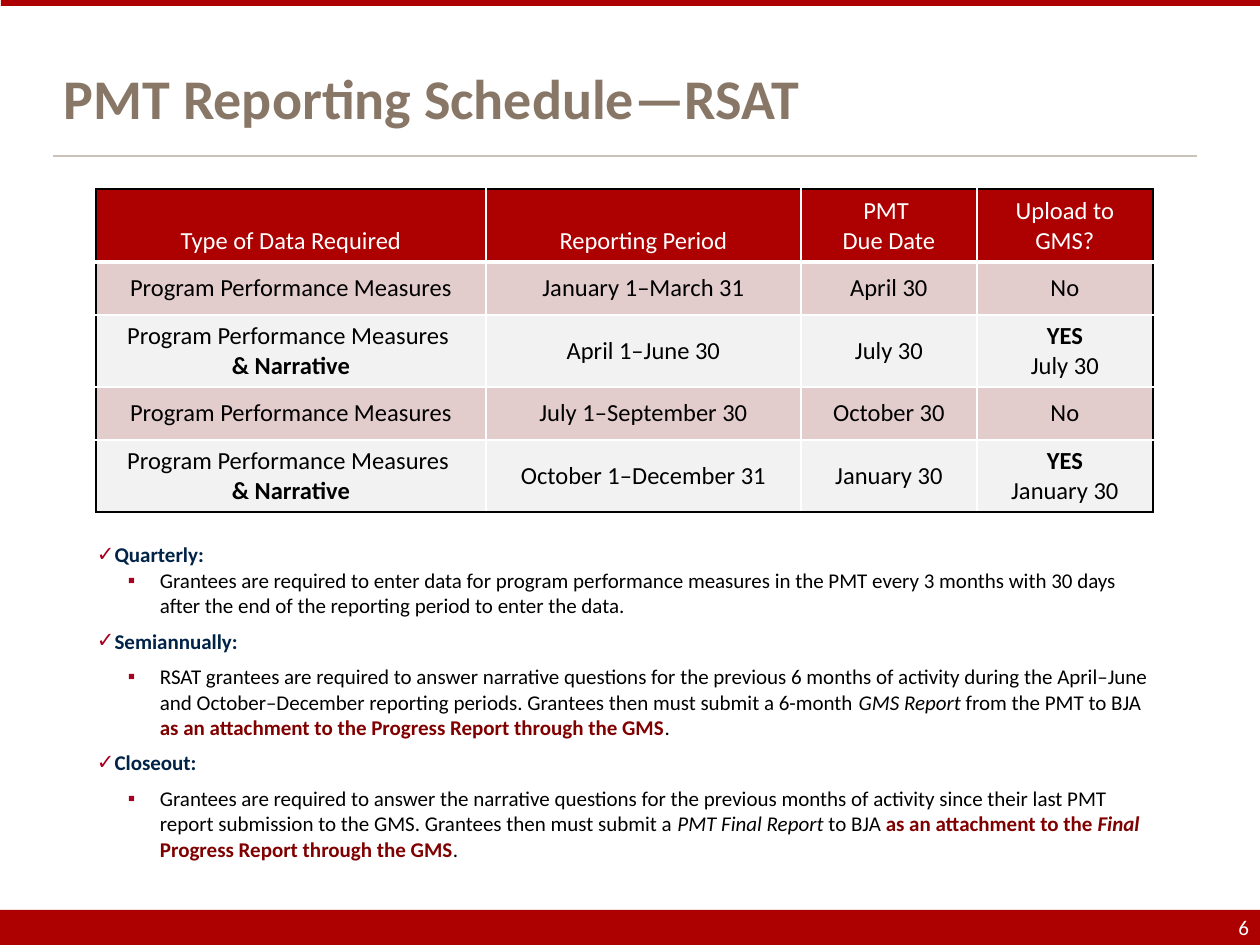
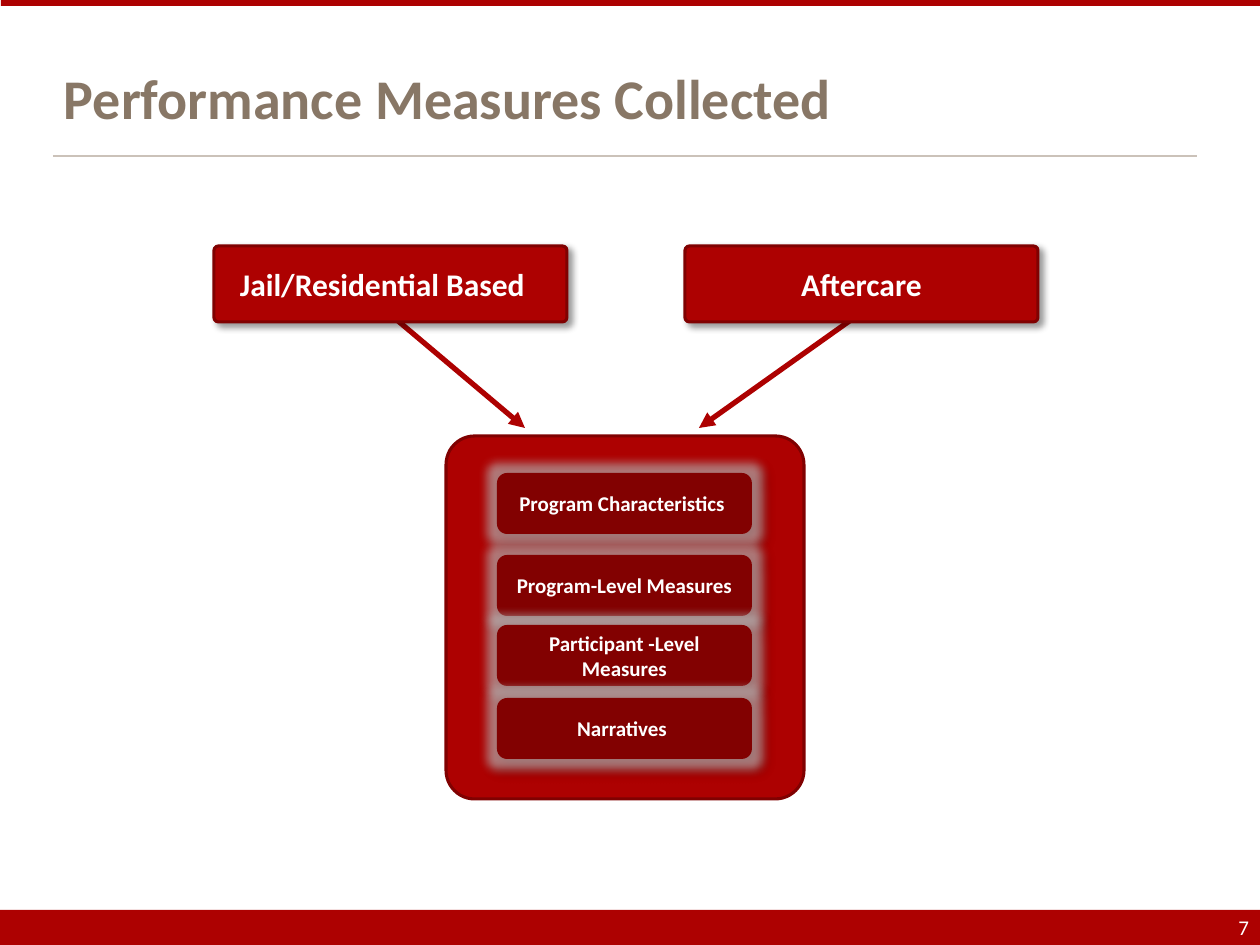
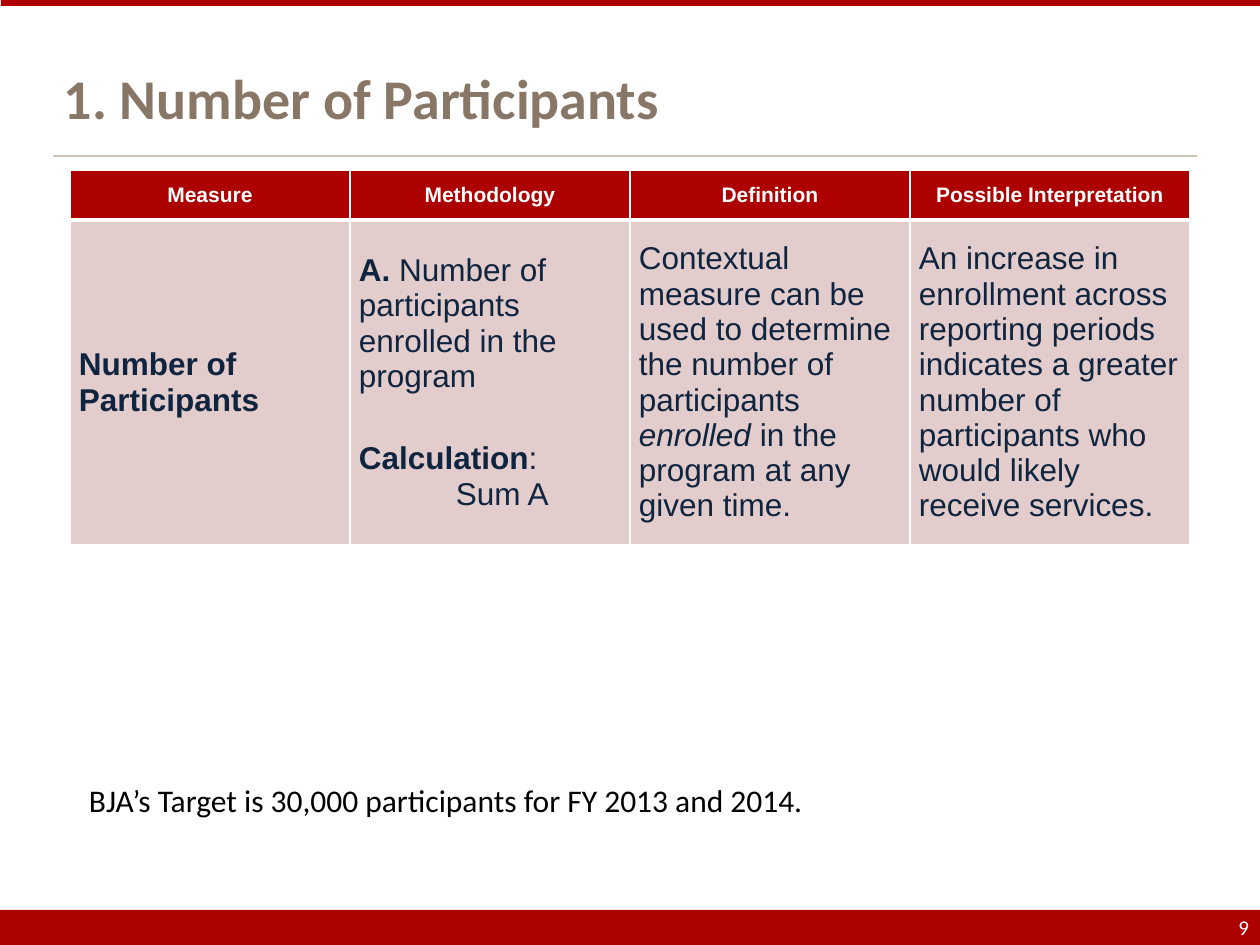
"""Build three slides on the PMT reporting schedule and its measures."""
from dataclasses import dataclass
from typing import Optional

from lxml import etree
from pptx import Presentation
from pptx.dml.color import RGBColor
from pptx.enum.shapes import MSO_CONNECTOR, MSO_SHAPE
from pptx.enum.text import MSO_ANCHOR, PP_ALIGN
from pptx.oxml.ns import qn
from pptx.util import Emu, Pt

LEFT, MID, RIGHT = PP_ALIGN.LEFT, PP_ALIGN.CENTER, PP_ALIGN.RIGHT
TOP, CENTER, BASE = MSO_ANCHOR.TOP, MSO_ANCHOR.MIDDLE, MSO_ANCHOR.BOTTOM
RECT, ROUND = MSO_SHAPE.RECTANGLE, MSO_SHAPE.ROUNDED_RECTANGLE
STRAIGHT = MSO_CONNECTOR.STRAIGHT
SCALE = 914400 / 126
WIDE, HIGH = 1260, 945


@dataclass(frozen=True)
class Theme:
    red: str = "AD0101"
    edge: str = "800101"
    deep: str = "820101"
    stress: str = "800000"
    tick: str = "A50021"
    pink: str = "E3CCCC"
    pale: str = "F2F2F2"
    rule: str = "CBC2B9"
    glow: str = "C8C8C8"
    title: str = "887766"
    navy: str = "002347"
    ink: str = "0F243E"
    black: str = "000000"
    white: str = "FFFFFF"
    body: str = "Calibri"
    grid: str = "Arial"
    huge: int = 32
    big: int = 18
    cell: int = 14
    small: int = 12


T = Theme()


@dataclass(frozen=True)
class Style:
    size: int = T.small
    color: str = T.black
    bold: bool = False
    font: str = T.body


@dataclass(frozen=True)
class Run:
    text: str
    bold: Optional[bool] = None
    italic: bool = False
    color: Optional[str] = None


@dataclass(frozen=True)
class Par:
    runs: tuple[Run, ...]
    align: PP_ALIGN = LEFT
    before: int = 0
    after: int = 0
    bullet: str = ""
    left: int = 0
    hang: int = 0


@dataclass(frozen=True)
class Box:
    x: int
    y: int
    w: int
    h: int


@dataclass(frozen=True)
class Pads:
    left: int = 13
    top: int = 6
    right: int = 13
    bottom: int = 6


@dataclass(frozen=True)
class Card:
    text: str
    box: Box
    pads: Pads = Pads()


SLIM = Pads(11, 5, 11, 5)
FLAT = Pads(9, 0, 9, 0)


def px(num: float) -> Emu:
    return Emu(round(num * SCALE))


def rgb(code: str) -> RGBColor:
    return RGBColor.from_string(code)


def place(box: Box) -> tuple[Emu, ...]:
    return px(box.x), px(box.y), px(box.w), px(box.h)


def add(node, tag: str, **attrs):
    return etree.SubElement(node, qn(tag), {key: str(val) for key, val in attrs.items()})


def tint(node, code: str, alpha: int = 100) -> None:
    color = add(node, "a:srgbClr", val=code)
    if alpha < 100:
        add(color, "a:alpha", val=alpha * 1000)


def para(text: str, align: PP_ALIGN = LEFT, bold: Optional[bool] = None) -> Par:
    return Par((Run(text, bold),), align)


def write(frame, pars: tuple[Par, ...], style: Style) -> None:
    for num, par in enumerate(pars):
        item = frame.add_paragraph() if num else frame.paragraphs[0]
        item.alignment = par.align
        item.space_before, item.space_after = Pt(par.before), Pt(par.after)
        props = item._p.get_or_add_pPr()
        props.set("marL", str(px(par.left)))
        props.set("indent", str(px(-par.hang)))
        if par.bullet:
            tint(add(props, "a:buClr"), T.tick)
            add(props, "a:buFont", typeface=T.grid)
            add(props, "a:buChar", char=par.bullet)
        for part in par.runs:
            run = item.add_run()
            run.text = part.text
            font = run.font
            font.name, font.size = style.font, Pt(style.size)
            font.bold = style.bold if part.bold is None else part.bold
            font.italic = part.italic
            font.color.rgb = rgb(part.color or style.color)


def fit(frame, pads: Pads, anchor: MSO_ANCHOR) -> None:
    frame.word_wrap = True
    frame.vertical_anchor = anchor
    frame.margin_left, frame.margin_right = px(pads.left), px(pads.right)
    frame.margin_top, frame.margin_bottom = px(pads.top), px(pads.bottom)


def label(slide, box: Box, pars: tuple[Par, ...], style: Style,
          pads: Pads = Pads(), anchor: MSO_ANCHOR = TOP) -> None:
    frame = slide.shapes.add_textbox(*place(box)).text_frame
    fit(frame, pads, anchor)
    write(frame, pars, style)


def panel(slide, box: Box, fill: str, kind: MSO_SHAPE = RECT,
          edge: str = "", curve: float = 0):
    shape = slide.shapes.add_shape(kind, *place(box))
    shape.shadow.inherit = False
    shape.fill.solid()
    shape.fill.fore_color.rgb = rgb(fill)
    if edge:
        shape.line.color.rgb = rgb(edge)
        shape.line.width = Pt(1.75)
    else:
        shape.line.fill.background()
    if curve:
        shape.adjustments[0] = curve
    return shape


def button(slide, card: Card, fill: str, size: int, edge: str = "",
           curve: float = 0, halo: bool = False) -> None:
    shape = panel(slide, card.box, fill, ROUND, edge, curve)
    fit(shape.text_frame, card.pads, CENTER)
    write(shape.text_frame, (para(card.text, MID),), Style(size, T.white, True))
    effects = shape._element.spPr.find(qn("a:effectLst"))
    if halo:
        tint(add(effects, "a:glow", rad=Pt(11)), T.glow, 60)
    shade = add(effects, "a:outerShdw", blurRad=Pt(4), dist=Pt(3),
                dir=45 * 60000, algn="tl", rotWithShape=0)
    tint(shade, T.black, 40)


def stroke(slide, start: tuple[int, int], end: tuple[int, int], color: str,
           width: float, arrow: bool = False) -> None:
    link = slide.shapes.add_connector(STRAIGHT, *map(px, start + end))
    link.line.color.rgb = rgb(color)
    link.line.width = Pt(width)
    props = link._element.spPr
    if arrow:
        add(props.find(qn("a:ln")), "a:tailEnd", type="triangle")
    add(props, "a:effectLst")


def border(cell, sides: dict[str, tuple[str, int]]) -> None:
    props = cell._tc.get_or_add_tcPr()
    for side in "LRTB":
        color, width = sides[side]
        line = add(props, f"a:ln{side}", w=Pt(width))
        tint(add(line, "a:solidFill"), color)


def table(slide, spot: tuple[int, int], cols: list[int], rows: list[int],
          cells: list[list[tuple[Par, ...]]], head: Style, body: Style,
          pads: Pads, rim: str, anchor: MSO_ANCHOR) -> None:
    box = Box(*spot, sum(cols), sum(rows))
    grid = slide.shapes.add_table(len(rows), len(cols), *place(box)).table
    grid.first_row = grid.horz_banding = False
    for col, width in zip(grid.columns, cols):
        col.width = px(width)
    for row, height in zip(grid.rows, rows):
        row.height = px(height)
    for r, line in enumerate(cells):
        for c, pars in enumerate(line):
            cell = grid.cell(r, c)
            ends = {"L": c == 0, "R": c == len(cols) - 1,
                    "T": r == 0, "B": r == len(rows) - 1}
            sides = {key: (rim if out else T.white, 1) for key, out in ends.items()}
            if r == 0:
                sides["B"] = (T.white, 3)
            elif r == 1:
                sides["T"] = (T.white, 3)
            border(cell, sides)
            cell.fill.solid()
            fill = T.pink if r % 2 else T.pale
            cell.fill.fore_color.rgb = rgb(fill if r else T.red)
            cell.vertical_anchor = CENTER if r else anchor
            cell.margin_left, cell.margin_right = px(pads.left), px(pads.right)
            cell.margin_top, cell.margin_bottom = px(pads.top), px(pads.bottom)
            cell.text_frame.word_wrap = True
            write(cell.text_frame, pars, body if r else head)


def start(deck, title: str, page: int):
    slide = deck.slides.add_slide(deck.slide_layouts[6])
    panel(slide, Box(0, 910, WIDE, 35), T.red)
    panel(slide, Box(1, 0, WIDE - 1, 6), T.red)
    stroke(slide, (53, 156), (1197, 156), T.rule, 1.25)
    label(slide, Box(53, 32, 1144, 104), (para(title),),
          Style(T.huge, T.title, True), SLIM, BASE)
    label(slide, Box(1182, 910, 78, 35), (para(str(page), RIGHT),),
          Style(color=T.white), SLIM, CENTER)
    return slide


def topic(text: str, after: int = 6) -> Par:
    return Par((Run(text, True, color=T.navy),), after=after, bullet="✓")


def detail(*runs: Run) -> Par:
    return Par(runs, after=6, bullet="▪", left=63, hang=32)


def stress(text: str, italic: bool = False) -> Run:
    return Run(text, True, italic, T.stress)


def schedule(deck) -> None:
    slide = start(deck, "PMT Reporting Schedule—RSAT", 6)
    name = "Program Performance Measures"
    terms = [("January 1–March 31", "April 30"), ("April 1–June 30", "July 30"),
             ("July 1–September 30", "October 30"),
             ("October 1–December 31", "January 30")]
    cells = [[(para("Type of Data Required", MID),),
              (para("Reporting Period", MID),),
              (para("PMT ", MID), para("Due Date", MID)),
              (para("Upload to GMS?", MID),)]]
    for num, (term, due) in enumerate(terms):
        kind, load = (para(name, MID),), (para("No", MID),)
        if num % 2:
            kind = (para(name + " ", MID), para("& Narrative", MID, True))
            load = (para("YES", MID, True), para(due, MID))
        cells.append([kind, (para(term, MID),), (para(due, MID),), load])
    table(slide, (96, 189), [390, 315, 176, 176], [73, 53, 72, 53, 72], cells,
          Style(T.cell, T.white), Style(T.cell), Pads(), T.black, BASE)
    label(slide, Box(84, 536, 1081, 335), (
        topic("Quarterly:", 0),
        detail(Run("Grantees are required to enter data for program performance "
                   "measures in the PMT every 3 months with 30 days after the end "
                   "of the reporting period to enter the data.")),
        topic("Semiannually:"),
        detail(Run("RSAT grantees are required to answer narrative questions for "
                   "the previous 6 months of activity during the April–June and "
                   "October–December reporting periods. Grantees then must submit "
                   "a 6-month "),
               Run("GMS Report ", italic=True), Run("from the PMT to BJA "),
               stress("as an attachment to the Progress Report through the GMS"),
               Run(".")),
        topic("Closeout:"),
        detail(Run("Grantees are required to answer the narrative questions for "
                   "the previous months of activity since their last PMT report "
                   "submission to the GMS. Grantees then must submit a "),
               Run("PMT Final Report", italic=True), Run(" to BJA "),
               stress("as an attachment to the "), stress("Final ", True),
               stress("Progress Report through the GMS"), Run("."))),
        Style())


def measures(deck) -> None:
    slide = start(deck, "Performance Measures Collected", 7)
    stroke(slide, (353, 283), (525, 428), T.red, 3, True)
    stroke(slide, (903, 283), (699, 428), T.red, 3, True)
    for card in (Card("Jail/Residential Based", Box(214, 246, 353, 76), Pads(right=29)),
                 Card("Aftercare", Box(685, 246, 353, 76))):
        button(slide, card, T.red, T.big, T.edge, 0.06)
    panel(slide, Box(446, 436, 358, 363), T.red, ROUND, T.edge, 0.08)
    for text, top in (("Program Characteristics ", 473),
                      ("Program-Level Measures", 555),
                      ("Participant -Level Measures", 625),
                      ("Narratives ", 698)):
        button(slide, Card(text, Box(497, top, 255, 61)), T.deep, T.small, halo=True)


def people(deck) -> None:
    slide = start(deck, "1. Number of Participants", 9)
    heads = ("Measure", "Methodology", "Definition", "Possible Interpretation")
    method = (Par((Run("A. ", True),
                   Run("Number of participants enrolled in the program"))),
              Par((Run("Calculation", True), Run(":")), before=27),
              Par((Run("Sum A"),), left=97))
    meaning = Par((Run("Contextual measure can be used to determine the number "
                       "of participants "),
                   Run("enrolled ", italic=True),
                   Run("in the program at any given time.")))
    cells = [[(para(text, MID),) for text in heads],
             [(para("Number of Participants", bold=True),), method, (meaning,),
              (para("An increase in enrollment across reporting periods indicates "
                    "a greater number of participants who would likely receive "
                    "services."),)]]
    table(slide, (70, 170), [280] * 4, [50, 325], cells,
          Style(T.small, T.white, True, T.grid), Style(T.big, T.ink, font=T.grid),
          FLAT, T.white, CENTER)
    label(slide, Box(76, 775, 983, 51),
          (para("BJA’s Target is 30,000 participants for FY 2013 and 2014."),),
          Style(T.big))


def main() -> None:
    deck = Presentation()
    deck.slide_width, deck.slide_height = px(WIDE), px(HIGH)
    for build in (schedule, measures, people):
        build(deck)
    deck.save("out.pptx")


if __name__ == "__main__":
    main()
